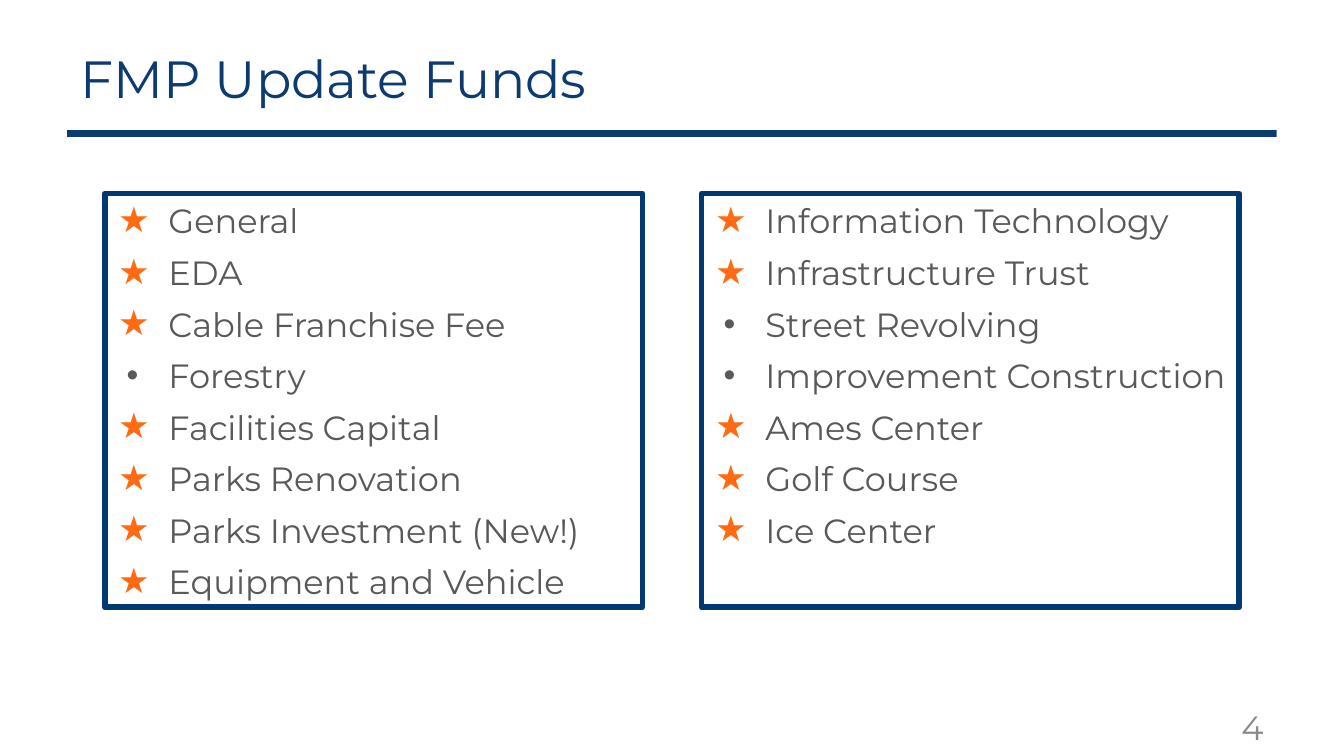
from pptx import Presentation
from pptx.util import Cm, Pt
from pptx.dml.color import RGBColor
from pptx.enum.shapes import MSO_SHAPE
from pptx.enum.text import MSO_ANCHOR, MSO_AUTO_SIZE, PP_ALIGN
from pptx.oxml.ns import qn
from lxml.etree import SubElement

FONT = "Montserrat"
HUES = {"navy": "0D3B70", "frame": "003A70", "star": "FF6A13",
        "text": "595959", "page": "898989"}

# Each fund is paired with whether it is starred
LEFT = [("General", True), ("EDA", True), ("Cable Franchise Fee", True),
        ("Forestry", False), ("Facilities Capital", True),
        ("Parks Renovation", True), ("Parks Investment (New!)", True),
        ("Equipment and Vehicle", True)]
RIGHT = [("Information Technology", True), ("Infrastructure Trust", True),
         ("Street Revolving", False), ("Improvement Construction", False),
         ("Ames Center", True), ("Golf Course", True), ("Ice Center", True)]


def hue(name):
    return RGBColor.from_string(HUES[name])


def place(shape, box):
    shape.left, shape.top, shape.width, shape.height = map(Cm, box)


def write(para, text, size, color):
    run = para.add_run()
    run.text = text
    run.font.name = FONT
    run.font.size = Pt(size)
    run.font.color.rgb = hue(color)


def mark(para, star):
    """Give a paragraph a star or a plain dot, with a hanging indent."""
    props = para._p.get_or_add_pPr()
    props.set("marL", str(Cm(0.95)))
    props.set("indent", str(-Cm(0.95 if star else 0.79)))
    if star:
        tint = SubElement(props, qn("a:buClr"))
        SubElement(tint, qn("a:srgbClr"), val=HUES["star"])
        SubElement(props, qn("a:buSzPct"), val="105000")
    SubElement(props, qn("a:buFont"), typeface="Arial")
    SubElement(props, qn("a:buChar"), char="★" if star else "•")


def add_head(slide, box):
    """Title with a rule below it."""
    x, y, w, h = box
    title = slide.shapes.title
    place(title, box)
    frame = title.text_frame
    frame.auto_size = MSO_AUTO_SIZE.NONE
    frame.vertical_anchor = MSO_ANCHOR.MIDDLE
    para = frame.paragraphs[0]
    para.alignment = PP_ALIGN.LEFT
    write(para, "FMP Update Funds", 28, "navy")

    rule = slide.shapes.add_shape(
        MSO_SHAPE.RECTANGLE, Cm(x), Cm(y + h + 0.33), Cm(w), Cm(0.13))
    rule.shadow.inherit = False
    rule.fill.solid()
    rule.fill.fore_color.rgb = hue("navy")
    rule.line.fill.background()


def add_list(body, box, funds):
    """Framed list of funds."""
    place(body, box)
    body.line.color.rgb = hue("frame")
    body.line.width = Pt(3)
    frame = body.text_frame
    frame.auto_size = MSO_AUTO_SIZE.NONE
    frame.vertical_anchor = MSO_ANCHOR.TOP
    frame.margin_right = Cm(0.15)
    for i, (name, star) in enumerate(funds):
        para = frame.add_paragraph() if i else frame.paragraphs[0]
        para.space_before = Pt(0)
        para.space_after = Pt(6)
        mark(para, star)
        write(para, name, 18, "text")


def add_page(slide, box):
    """Page number."""
    area = slide.shapes.add_textbox(*map(Cm, box))
    area.text_frame.word_wrap = True
    para = area.text_frame.paragraphs[0]
    para.alignment = PP_ALIGN.RIGHT
    write(para, "4", 18, "page")


def main():
    deck = Presentation()
    deck.slide_width, deck.slide_height = Cm(25.4), Cm(14.29)
    slide = deck.slides.add_slide(deck.slide_layouts[3])
    add_head(slide, (1.27, 0.81, 22.86, 1.32))

    # Two equal columns
    wide, gap = 10.16, 1.12
    for i, funds in enumerate((LEFT, RIGHT)):
        box = (1.98 + i * (wide + gap), 3.66, wide, 7.82)
        add_list(slide.placeholders[i + 1], box, funds)

    add_page(slide, (22.83, 13.23, 1.3, 0.76))
    deck.save("out.pptx")


if __name__ == "__main__":
    main()
